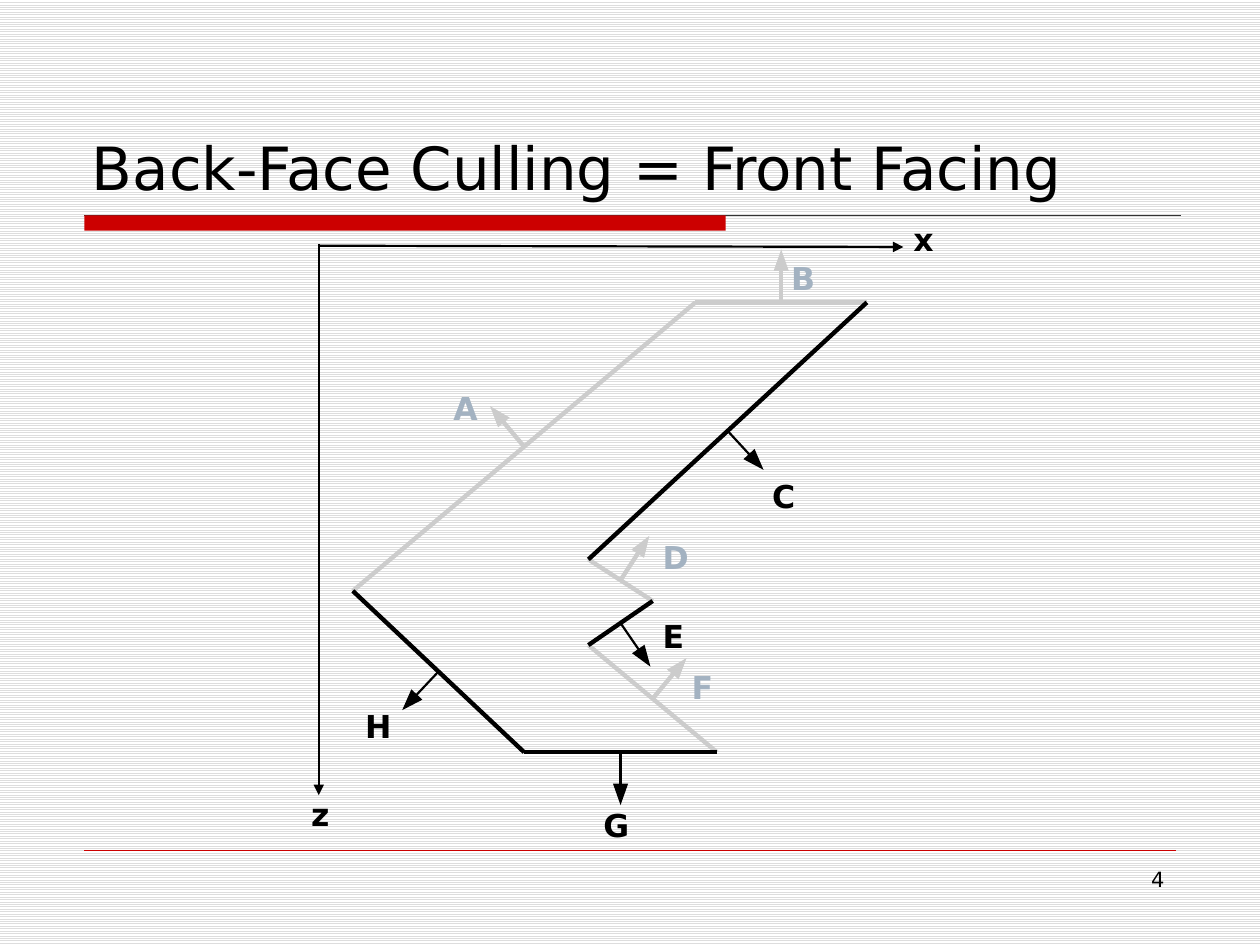
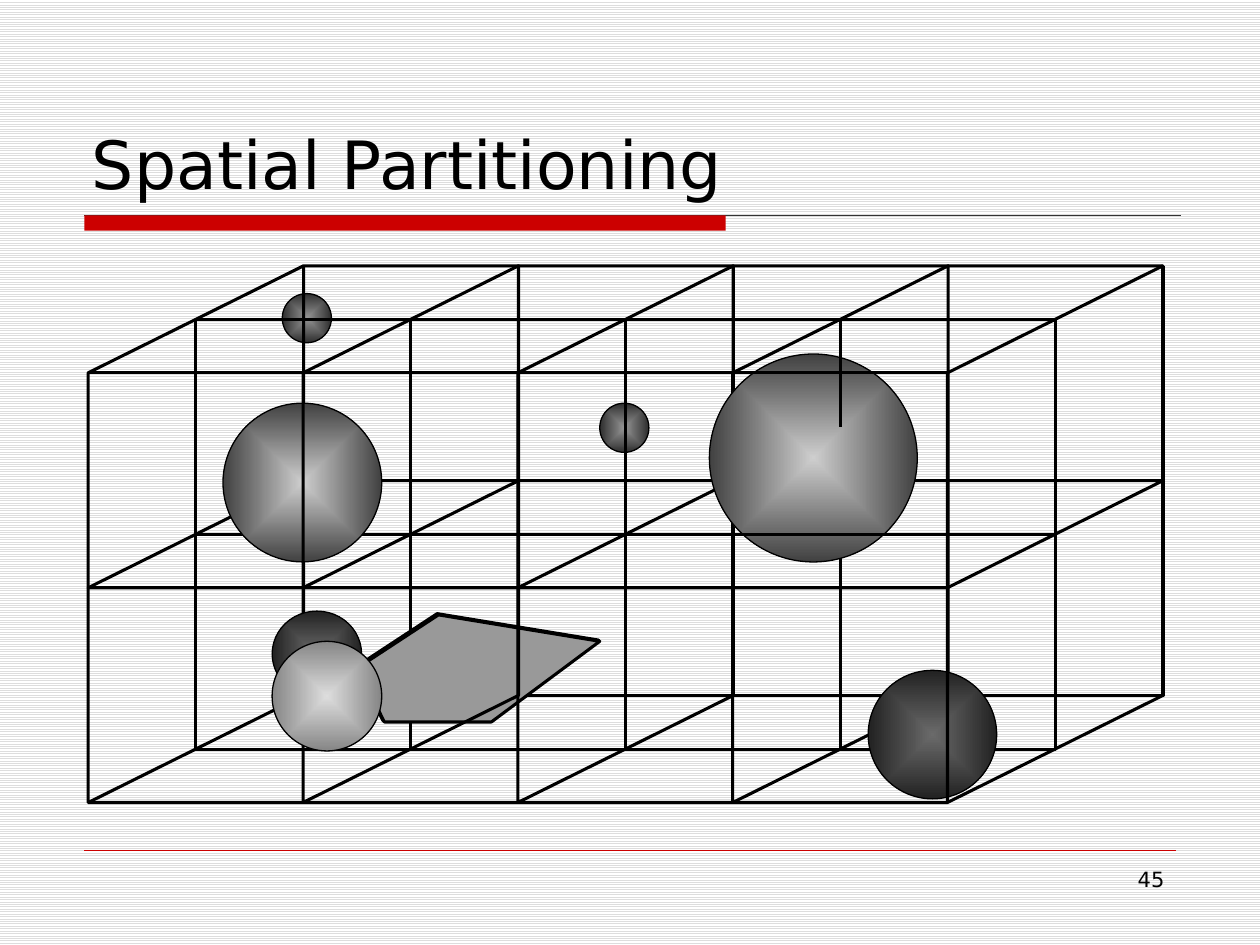
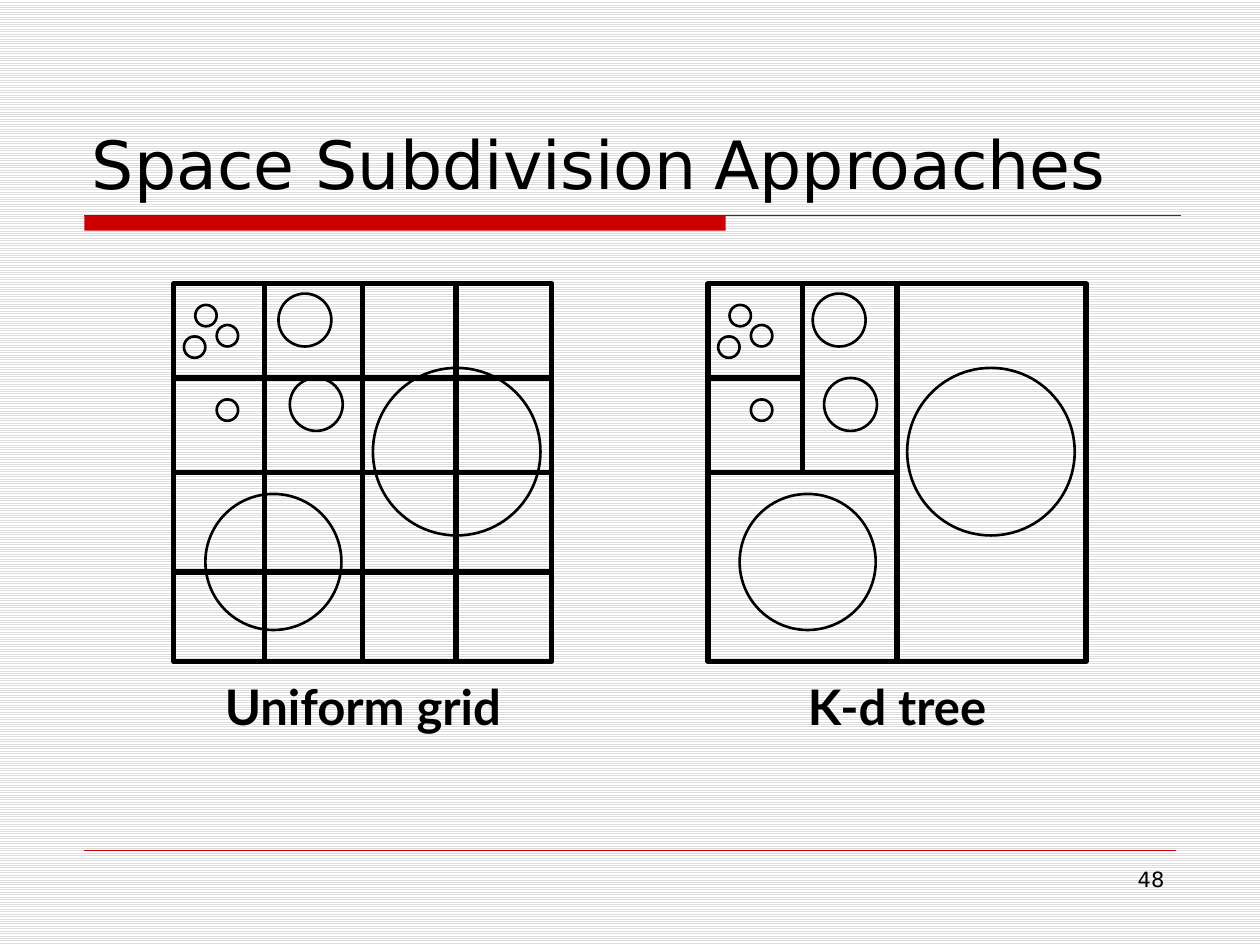
from math import hypot

from lxml import etree
from pptx import Presentation
from pptx.dml.color import RGBColor
from pptx.enum.dml import MSO_PATTERN
from pptx.enum.shapes import MSO_CONNECTOR, MSO_SHAPE
from pptx.enum.text import MSO_ANCHOR, MSO_AUTO_SIZE, PP_ALIGN
from pptx.oxml import parse_xml
from pptx.oxml.ns import nsdecls, qn
from pptx.util import Inches, Pt

STRAIGHT = MSO_CONNECTOR.STRAIGHT
OVAL, RECT = MSO_SHAPE.OVAL, MSO_SHAPE.RECTANGLE
LEFT, CENTER, RIGHT = PP_ALIGN.LEFT, PP_ALIGN.CENTER, PP_ALIGN.RIGHT

BODY_FONT, CAPTION_FONT = "DejaVu Sans", "Lato"
BLACK, WHITE, RED, RULE = "000000", "FFFFFF", "CC0000", "333333"
STRIPE, CULLED, CULLED_LABEL, PANEL = "DDDDDD", "CCCCCC", "A3B2C1", "999999"

AXES = [("x", (2.54, 1.95), (7.17, 1.96), (7.15, 1.7)),
        ("z", (2.53, 1.94), (2.53, 6.31), (2.37, 6.26))]
OUTLINE = [(2.8, 4.69), (5.52, 2.4), (6.88, 2.4), (4.67, 4.44),
           (5.18, 4.77), (4.67, 5.12), (5.69, 5.97), (4.16, 5.97)]
FACE_LABELS = [("A", 3.5, 3.04), ("B", 6.18, 2.01), ("C", 6.03, 3.74), ("D", 5.16, 4.22),
               ("E", 5.16, 4.85), ("F", 5.39, 5.25), ("G", 4.69, 6.35), ("H", 2.8, 5.56)]
BACK_FACES = "ABDF"
NORMAL, HEAD_LENGTH, HEAD_HALF, HEAD_OVERLAP = 0.42, 0.17, 0.06, 0.04

CELL, DEPTH_X, DEPTH_Y = 1.705, 0.855, 0.425
BACK_CORNER = (2.41, 2.11)
TINY, DARK, MID, PALE = (("959595", "2F2F2F"), ("6A6A6A", "222222"),
                         ("CECECE", "414141"), ("DDDDDD", "868686"))
PENTAGON = [(3.47, 4.87), (2.83, 5.29), (3.04, 5.72), (3.89, 5.72), (4.75, 5.08), (3.47, 4.87)]


def cross_wall(column):
    return [(column, 0, 0), (column, 0, 2), (column, 2, 2), (column, 2, 0), (column, 0, 0)]


SCENE = [
    ("sphere", (2.24, 2.33, 0.39, 0.39), TINY),
    ("sphere", (4.76, 3.2, 0.39, 0.39), TINY),
    ("edges", [(4, 0, 0), (4, 2, 0), (0, 2, 0), (0, 0, 0)]),
    ("edges", [(0, 0, 0), (4, 0, 0), (4, 2, 0), (4, 2, 2), (0, 2, 2), (0, 0, 2), (0, 0, 0)]),
    ("edges", [(0, 2, 2), (0, 2, 0), (0, 0, 0)]),
    ("edges", [(0, 1, 2), (4, 1, 2), (4, 1, 0), (0, 1, 0), (0, 1, 2)]),
    ("edges", [(1, 1, 2), (1, 1, 0)]),
    ("edges", [(2, 1, 2), (2, 1, 0)]),
    ("edges", [(0, 0, 1), (4, 0, 1), (4, 2, 1), (0, 2, 1), (0, 0, 1)]),
    ("edges", [(1, 0, 1), (1, 2, 1)]),
    ("edges", [(3, 0, 1), (3, 2, 1)]),
    ("edges", [(2, 0, 1), (2, 2, 1)]),
    ("edges", cross_wall(3)),
    ("panel", 0, WHITE),
    ("panel", 0.01, PANEL),
    ("edges", cross_wall(2)),
    ("edges", [(0, 0, 1), (1, 0, 1)]),
    ("edges", [(1, 1, 1), (0.62, 1, 1)]),
    ("sphere", (6.89, 5.32, 1.02, 1.02), DARK),
    ("edges", [(4, 0, 0), (4, 0, 2), (4, 2, 2)]),
    ("sphere", (5.63, 2.81, 1.65, 1.65), MID),
    ("edges", [(3, 0, 1), (3, 0.5, 1)]),
    ("edges", [(0, 0, 2), (4, 0, 2), (4, 2, 2)]),
    ("edges", [(0, 1, 1), (4, 1, 1)]),
    ("sphere", (1.77, 3.2, 1.26, 1.26), MID),
    ("edges", cross_wall(1)),
    ("sphere", (2.16, 4.85, 0.71, 0.68), DARK),
    ("sphere", (2.16, 5.09, 0.87, 0.87), PALE),
]

SQUARE, SQUARE_TOP = 3, 2.25
HALF = SQUARE / 2
CIRCLES = [(0.17, 0.17, 0.17), (0.34, 0.33, 0.17), (0.08, 0.42, 0.17), (0.34, 0.92, 0.17),
           (0.83, 0.08, 0.42), (0.92, 0.75, 0.42), (0.25, 1.67, 1.08), (1.58, 0.67, 1.33)]
SIDE_SITES = {(HALF, 0): 0, (0, HALF): 1, (HALF, SQUARE): 2, (SQUARE, HALF): 3}
GRID_DIVIDERS = ([((x, SQUARE), (x, 0)) for x in (0.72, HALF, 2.24)]
                 + [((SQUARE, y), (0, y)) for y in (0.75, HALF, 2.29)])
TREE_DIVIDERS = [((HALF, SQUARE), (HALF, 0)), ((HALF, HALF), (0, HALF)),
                 ((0.75, HALF), (0.75, 0)), ((0.75, 0.75), (0, 0.75))]
SUBDIVISIONS = [("K-d tree", 5.62, TREE_DIVIDERS), ("Uniform grid", 1.38, GRID_DIVIDERS)]


def rgb(value):
    return RGBColor.from_string(value)


def paint(shape, fill, line, width):
    shape.shadow.inherit = False
    if fill:
        shape.fill.solid()
        shape.fill.fore_color.rgb = rgb(fill)
    else:
        shape.fill.background()
    if line:
        shape.line.color.rgb = rgb(line)
        shape.line.width = Pt(width)
    else:
        shape.line.fill.background()
    return shape


def preset(slide, kind, box, fill=None, line=BLACK, width=0.75):
    return paint(slide.shapes.add_shape(kind, *map(Inches, box)), fill, line, width)


def polygon(slide, points, fill=None, line=BLACK, width=1.75, close=False):
    spots = [(Inches(x), Inches(y)) for x, y in points]
    builder = slide.shapes.build_freeform(*spots[0], scale=1.0)
    builder.add_line_segments(spots[1:], close=close)
    return paint(builder.convert_to_shape(), fill, line, width)


def connect(slide, start, end, color=BLACK, width=1.75, arrow=False):
    line = slide.shapes.add_connector(STRAIGHT, *map(Inches, (*start, *end)))
    line.line.color.rgb = rgb(color)
    line.line.width = Pt(width)
    properties = line._element.spPr
    etree.SubElement(properties, qn("a:effectLst"))
    if arrow:
        etree.SubElement(properties.find(qn("a:ln")), qn("a:tailEnd"), type="triangle")
    return line


def write(slide, text, box, size, align=LEFT, color=BLACK, bold=False, font=BODY_FONT):
    frame = slide.shapes.add_textbox(*map(Inches, box)).text_frame
    frame.word_wrap = True
    paragraph = frame.paragraphs[0]
    paragraph.text = text
    paragraph.alignment = align
    style(paragraph.font, size, font, color, bold)


def style(font, size, name=BODY_FONT, color=BLACK, bold=False):
    font.size, font.name, font.bold = Pt(size), name, bold
    font.color.rgb = rgb(color)


def start_slide(prs, title_runs, number):
    slide = prs.slides.add_slide(prs.slide_layouts[5])
    connect(slide, (0.67, 1.71), (9.37, 1.71), RULE, 0.75)
    preset(slide, RECT, (0.67, 1.71, 5.09, 0.12), RED, None)
    connect(slide, (0.67, 6.75), (9.33, 6.75), RED, 0.25)
    title = slide.shapes.title
    title.left, title.top, title.width, title.height = map(Inches, (0.63, 0.33, 8.75, 1.33))
    frame = title.text_frame
    frame.auto_size = MSO_AUTO_SIZE.NONE
    frame.vertical_anchor = MSO_ANCHOR.BOTTOM
    paragraph = frame.paragraphs[0]
    paragraph.alignment = LEFT
    for text, size in title_runs:
        run = paragraph.add_run()
        run.text = text
        style(run.font, size)
    write(slide, str(number), (7.17, 6.83, 2.17, 0.52), 12, RIGHT)
    return slide


def draw_normal(slide, start, end, color, width):
    dx, dy = end[0] - start[0], end[1] - start[1]
    length = hypot(dx, dy)
    nx, ny = dy / length, -dx / length
    middle = ((start[0] + end[0]) / 2, (start[1] + end[1]) / 2)

    def spot(along, across=0):
        return (middle[0] + nx * along - ny * across, middle[1] + ny * along + nx * across)

    neck = NORMAL - HEAD_LENGTH
    connect(slide, middle, spot(neck + HEAD_OVERLAP), color, width)
    polygon(slide, [spot(neck, HEAD_HALF), spot(neck, -HEAD_HALF), spot(NORMAL)],
            color, None, close=True)


def draw_culling(slide):
    for name, start, end, label in AXES:
        connect(slide, start, end, width=1.25, arrow=True)
        write(slide, name, (*label, 0.42, 0.4), 18, bold=True)
    faces = list(zip(FACE_LABELS, OUTLINE, OUTLINE[1:] + OUTLINE[:1]))
    faces.sort(key=lambda face: face[0][0] not in BACK_FACES)
    for (name, x, y), start, end in faces:
        culled = name in BACK_FACES
        color = CULLED if culled else BLACK
        connect(slide, start, end, color, 2.5)
        draw_normal(slide, start, end, color, 2.5 if culled else 1.25)
        write(slide, name, (x, y, 0.42, 0.4), 18, bold=True,
              color=CULLED_LABEL if culled else BLACK)


def grid_point(column, row, depth):
    return (BACK_CORNER[0] + CELL * column - DEPTH_X * depth,
            BACK_CORNER[1] + CELL * row + DEPTH_Y * depth)


def draw_sphere(slide, box, shades):
    sphere = preset(slide, OVAL, box)
    sphere.fill.gradient()
    for stop, shade, position in zip(sphere.fill.gradient_stops, shades, (0, 1)):
        stop.color.rgb = rgb(shade)
        stop.position = position
    gradient = sphere._element.spPr.find(qn("a:gradFill"))
    linear = gradient.find(qn("a:lin"))
    gradient.replace(linear, parse_xml(
        f'<a:path {nsdecls("a")} path="shape">'
        '<a:fillToRect l="50000" t="50000" r="50000" b="50000"/></a:path>'))


def draw_partitioning(slide):
    for kind, *details in SCENE:
        if kind == "sphere":
            draw_sphere(slide, *details)
        elif kind == "panel":
            shift, fill = details
            polygon(slide, [(x + shift, y + shift) for x, y in PENTAGON], fill)
        else:
            points = [grid_point(*corner) for corner in details[0]]
            if len(points) == 2:
                connect(slide, *points)
            else:
                polygon(slide, points)


def draw_subdivisions(slide):
    for caption, left, dividers in SUBDIVISIONS:
        square = preset(slide, RECT, (left, SQUARE_TOP, SQUARE, SQUARE), width=3)
        for start, end in dividers:
            divider = connect(slide, *[(left + x, SQUARE_TOP + y) for x, y in (start, end)],
                              width=3)
            if start in SIDE_SITES:
                divider.begin_connect(square, SIDE_SITES[start])
            if end in SIDE_SITES:
                divider.end_connect(square, SIDE_SITES[end])
        for x, y, size in CIRCLES:
            preset(slide, OVAL, (left + x, SQUARE_TOP + y, size, size), width=1.5)
        write(slide, caption, (left, 5.32, SQUARE, 0.57), 28, CENTER,
              bold=True, font=CAPTION_FONT)


SLIDES = [
    ([("Back-Face Culling = Front Facing", 34)], 4, draw_culling),
    ([("Spatial Partitioning", 38)], 45, draw_partitioning),
    ([("Space Subdivision", 38), (" ", 30), ("Approaches", 38)], 48, draw_subdivisions),
]


def main():
    prs = Presentation()
    prs.slide_width, prs.slide_height = Inches(10), Inches(7.5)
    backdrop = prs.slide_master.background.fill
    backdrop.patterned()
    backdrop.pattern = MSO_PATTERN.LIGHT_HORIZONTAL
    backdrop.fore_color.rgb = rgb(STRIPE)
    backdrop.back_color.rgb = rgb(WHITE)
    for title_runs, number, draw in SLIDES:
        draw(start_slide(prs, title_runs, number))
    prs.save("out.pptx")


if __name__ == "__main__":
    main()
